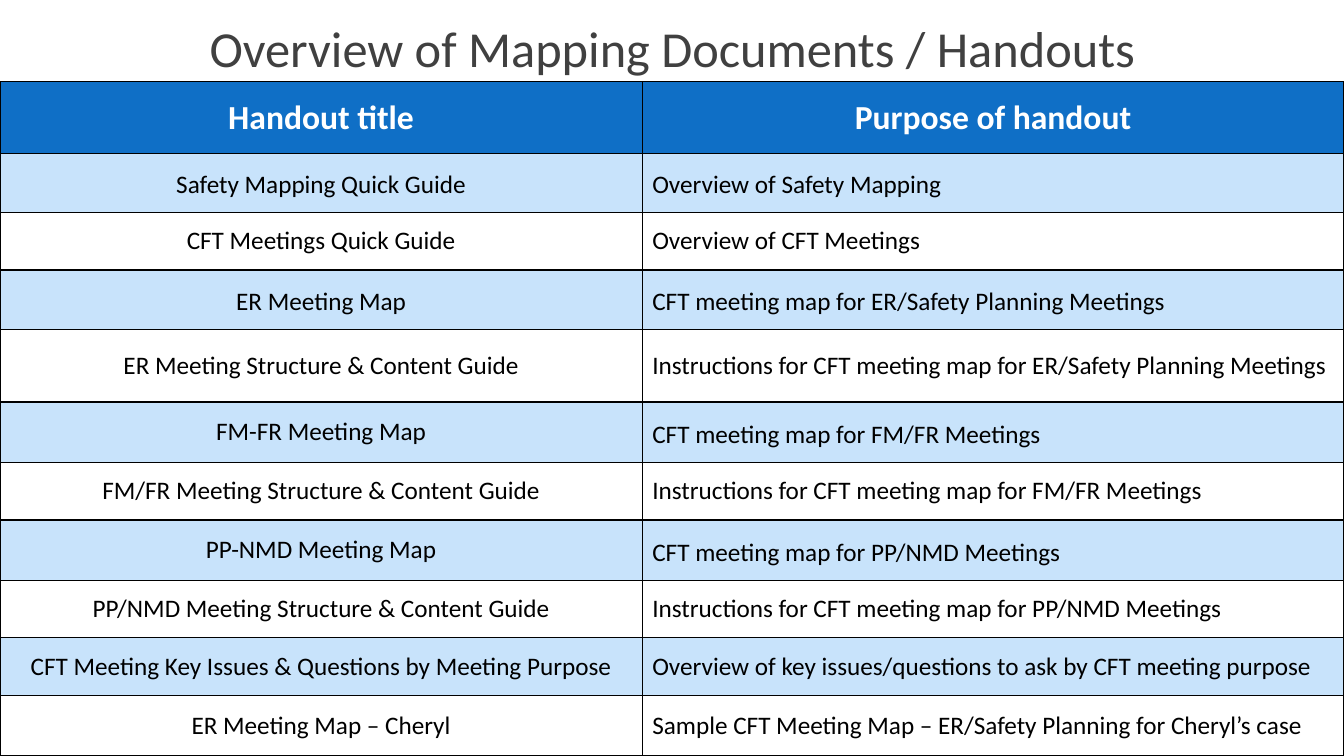
import pptx
import pptx.util
import pptx.dml.color
import pptx.enum.text
import pptx.oxml.ns
import lxml.etree

Inches = pptx.util.Inches
Pt = pptx.util.Pt
ALIGN = pptx.enum.text.PP_ALIGN
ANCHOR = pptx.enum.text.MSO_ANCHOR

FONT = "Calibri"
COLORS = {
    "heading": "404040",
    "header": "0F6FC6",
    "header_text": "FFFFFF",
    "band": "C8E3FB",
    "text": "000000",
    "border": "000000",
}
HEADING = "Overview of Mapping Documents / Handouts"
COLUMN_WIDTHS = (6.37, 6.96)
HEADER = (0.71, ("Handout title", 1.15), ("Purpose of handout", 1.15))
HANDOUTS = [
    (0.59, ("Safety Mapping Quick Guide", 1.15), ("Overview of Safety Mapping", 1.15)),
    (0.57, ("CFT Meetings Quick Guide", 1), ("Overview of CFT Meetings", 1)),
    (0.59, ("ER Meeting Map", 1.15), ("CFT meeting map for ER/Safety Planning Meetings", 1.15)),
    (0.72, ("ER Meeting Structure & Content Guide", 1),
     ("Instructions for CFT meeting map for ER/Safety Planning Meetings", 1)),
    (0.6, ("FM-FR Meeting Map", 1), ("CFT meeting map for FM/FR Meetings", 1.15)),
    (0.57, ("FM/FR Meeting Structure & Content Guide", 1),
     ("Instructions for CFT meeting map for FM/FR Meetings", 1)),
    (0.6, ("PP-NMD Meeting Map", 1), ("CFT meeting map for PP/NMD Meetings", 1.15)),
    (0.57, ("PP/NMD Meeting Structure & Content Guide", 1),
     ("Instructions for CFT meeting map for PP/NMD Meetings", 1)),
    (0.57, ("CFT Meeting Key Issues & Questions by Meeting Purpose", 1),
     ("Overview of key issues/questions to ask by CFT meeting purpose", 1)),
    (0.6, ("ER Meeting Map – Cheryl", 1),
     ("Sample CFT Meeting Map – ER/Safety Planning for Cheryl’s case", 1)),
]


def rgb(name):
    return pptx.dml.color.RGBColor.from_string(COLORS[name])


def write(frame, text, size, color, align, spacing, bold=False):
    paragraph = frame.paragraphs[0]
    paragraph.alignment = align
    paragraph.line_spacing = spacing
    run = paragraph.add_run()
    run.text = text
    run.font.name = FONT
    run.font.size = Pt(size)
    run.font.bold = bold
    run.font.color.rgb = rgb(color)


def add_borders(cell):
    properties = cell._tc.get_or_add_tcPr()
    qn = pptx.oxml.ns.qn
    for position, side in enumerate(("lnL", "lnR", "lnT", "lnB")):
        border = lxml.etree.Element(qn("a:" + side), w=str(Pt(1)))
        fill = lxml.etree.SubElement(border, qn("a:solidFill"))
        lxml.etree.SubElement(fill, qn("a:srgbClr"), val=COLORS["border"])
        properties.insert(position, border)


def main():
    deck = pptx.Presentation()
    deck.slide_width, deck.slide_height = Inches(13.33), Inches(7.5)
    slide = deck.slides.add_slide(deck.slide_layouts[5])

    heading = slide.shapes.title
    heading.left, heading.top = Inches(0.92), Inches(0)
    heading.width, heading.height = Inches(11.5), Inches(1.01)
    heading.text_frame.auto_size = pptx.enum.text.MSO_AUTO_SIZE.NONE
    heading.text_frame.vertical_anchor = ANCHOR.MIDDLE
    write(heading.text_frame, HEADING, 36, "heading", ALIGN.CENTER, 0.9)

    rows = [HEADER] + HANDOUTS
    handouts = slide.shapes.add_table(
        len(rows), len(COLUMN_WIDTHS), Inches(0), Inches(0.81),
        Inches(sum(COLUMN_WIDTHS)), Inches(sum(row[0] for row in rows))).table
    handouts.horz_banding = False
    for column, width in zip(handouts.columns, COLUMN_WIDTHS):
        column.width = Inches(width)

    for r, (height, *entries) in enumerate(rows):
        is_header = r == 0
        handouts.rows[r].height = Inches(height)
        for c, (text, spacing) in enumerate(entries):
            cell = handouts.cell(r, c)
            cell.margin_left = cell.margin_right = Inches(0.1)
            cell.margin_top = cell.margin_bottom = Inches(0.1)
            cell.vertical_anchor = ANCHOR.TOP if is_header else ANCHOR.MIDDLE
            if is_header or r % 2:
                cell.fill.solid()
                cell.fill.fore_color.rgb = rgb("header" if is_header else "band")
            else:
                cell.fill.background()
            add_borders(cell)
            write(cell.text_frame, text, 24 if is_header else 18,
                  "header_text" if is_header else "text",
                  ALIGN.CENTER if is_header or c == 0 else ALIGN.LEFT,
                  spacing, is_header)

    deck.save("out.pptx")


if __name__ == "__main__":
    main()
